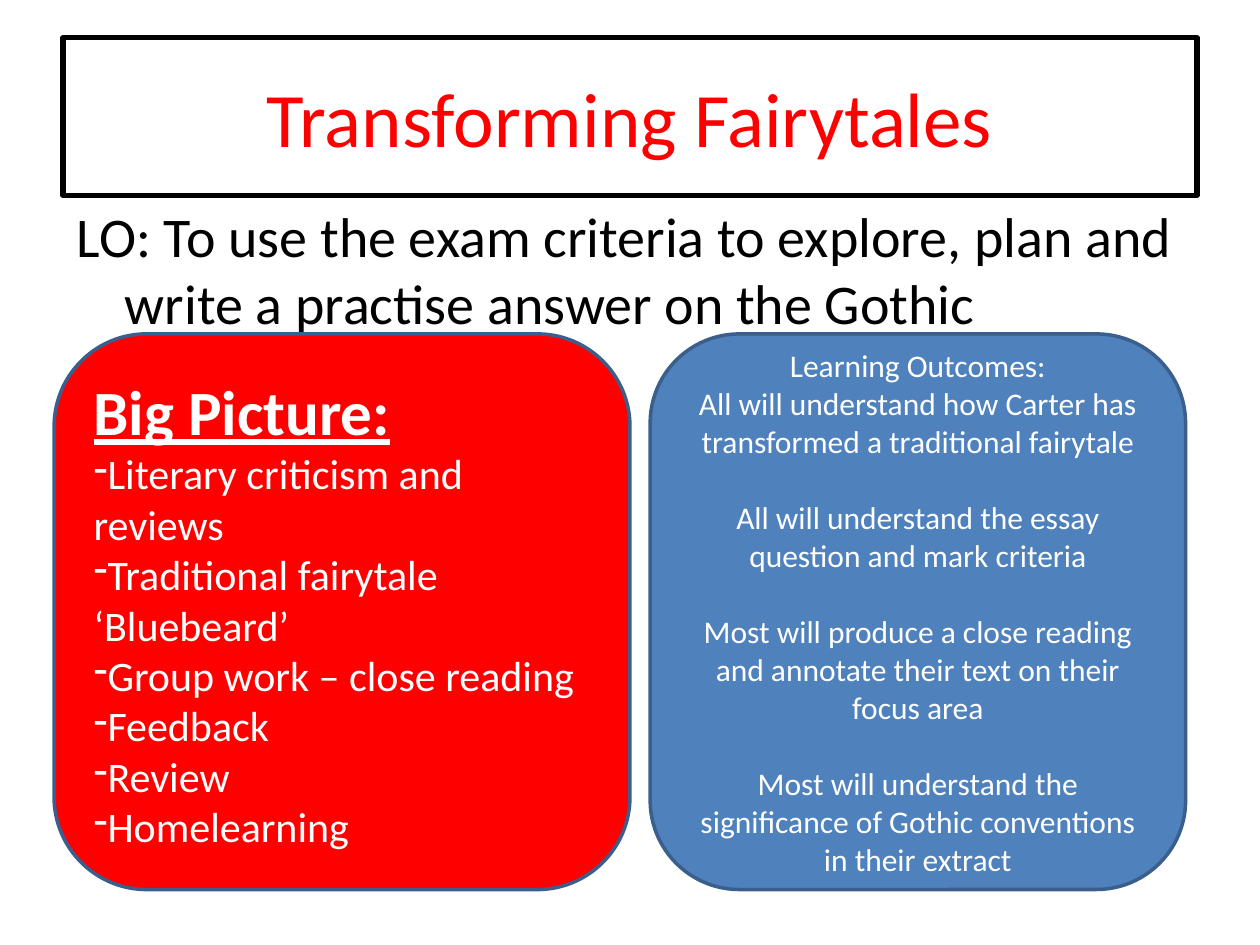
from lxml import etree
from pptx import Presentation, util as u
from pptx.dml.color import RGBColor
from pptx.enum import shapes, text
from pptx.oxml.ns import qn

COLORS = {"red": "FF0000", "blue": "4F81BD", "edge": "3A5F8C",
          "black": "000000", "white": "FFFFFF"}
FONT = "Calibri"
TITLE = "Transforming Fairytales"
OBJECTIVE = ("LO: To use the exam criteria to explore, plan and write "
             "a practise answer on the Gothic")
PICTURE_HEADING = "Big Picture:"
PICTURE_STEPS = [
    "Literary criticism and reviews",
    "Traditional fairytale ‘Bluebeard’",
    "Group work – close reading",
    "Feedback",
    "Review",
    "Homelearning",
]
OUTCOMES_HEADING = "Learning Outcomes:"
OUTCOMES = [
    "All will understand how Carter has transformed a traditional fairytale",
    "All will understand the essay question and mark criteria",
    "Most will produce a close reading and annotate their text on their focus area",
    "Most will understand the significance of Gothic conventions in their extract",
]
PANEL_TOP, PANEL_HEIGHT = 2.65, 4.41
OUTCOME_GAP = 22


def rgb(name):
    return RGBColor.from_string(COLORS[name])


def place(shape, left, top, width, height):
    shape.left, shape.top = u.Inches(left), u.Inches(top)
    shape.width, shape.height = u.Inches(width), u.Inches(height)


def set_bullet(paragraph, char=None, margin=0, indent=0):
    props = paragraph._p.get_or_add_pPr()
    props.set("marL", str(u.Inches(margin)))
    props.set("indent", str(u.Inches(indent)))
    if char:
        etree.SubElement(props, qn("a:buFontTx"))
        etree.SubElement(props, qn("a:buChar")).set("char", char)
    else:
        etree.SubElement(props, qn("a:buNone"))


def style(paragraph, size, color, align, strong=False):
    paragraph.alignment = align
    font = paragraph.font
    font.name, font.size = FONT, u.Pt(size)
    font.color.rgb = rgb(color)
    if strong:
        font.bold = font.underline = True


def add_panel(slide, left, width, fill, lines):
    panel = slide.shapes.add_shape(
        shapes.MSO_SHAPE.ROUNDED_RECTANGLE, u.Inches(left), u.Inches(PANEL_TOP),
        u.Inches(width), u.Inches(PANEL_HEIGHT))
    panel.shadow.inherit = False
    panel.fill.solid()
    panel.fill.fore_color.rgb = rgb(fill)
    panel.line.color.rgb = rgb("edge")
    panel.line.width = u.Pt(2)
    frame = panel.text_frame
    frame.word_wrap = True
    frame.vertical_anchor = text.MSO_ANCHOR.MIDDLE
    paragraphs = [frame.paragraphs[0]] + [frame.add_paragraph() for _ in lines[1:]]
    for paragraph, line in zip(paragraphs, lines):
        paragraph.text = line
    return paragraphs


def main():
    deck = Presentation()
    deck.slide_width, deck.slide_height = u.Inches(10), u.Inches(7.5)
    slide = deck.slides.add_slide(deck.slide_layouts[1])
    left, center = text.PP_ALIGN.LEFT, text.PP_ALIGN.CENTER

    title = slide.shapes.title
    place(title, 0.5, 0.3, 9, 1.25)
    title.text = TITLE
    title.line.color.rgb = rgb("black")
    title.line.width = u.Pt(3)
    style(title.text_frame.paragraphs[0], 44, "red", center)

    objective = slide.placeholders[1]
    place(objective, 0.51, 1.55, 9, 1.13)
    objective.text = OBJECTIVE
    paragraph = objective.text_frame.paragraphs[0]
    set_bullet(paragraph, margin=0.38, indent=-0.38)
    style(paragraph, 32, "black", left)

    heading, *steps = add_panel(slide, 0.43, 4.57, "red",
                                [PICTURE_HEADING] + PICTURE_STEPS)
    style(heading, 36, "white", left, strong=True)
    for step in steps:
        set_bullet(step, "-")
        style(step, 24, "white", left)

    heading, *outcomes = add_panel(slide, 5.16, 4.25, "blue",
                                   [OUTCOMES_HEADING] + OUTCOMES)
    style(heading, 18, "white", center)
    for index, outcome in enumerate(outcomes):
        style(outcome, 18, "white", center)
        if index:
            outcome.space_before = u.Pt(OUTCOME_GAP)

    deck.save("out.pptx")


if __name__ == "__main__":
    main()
